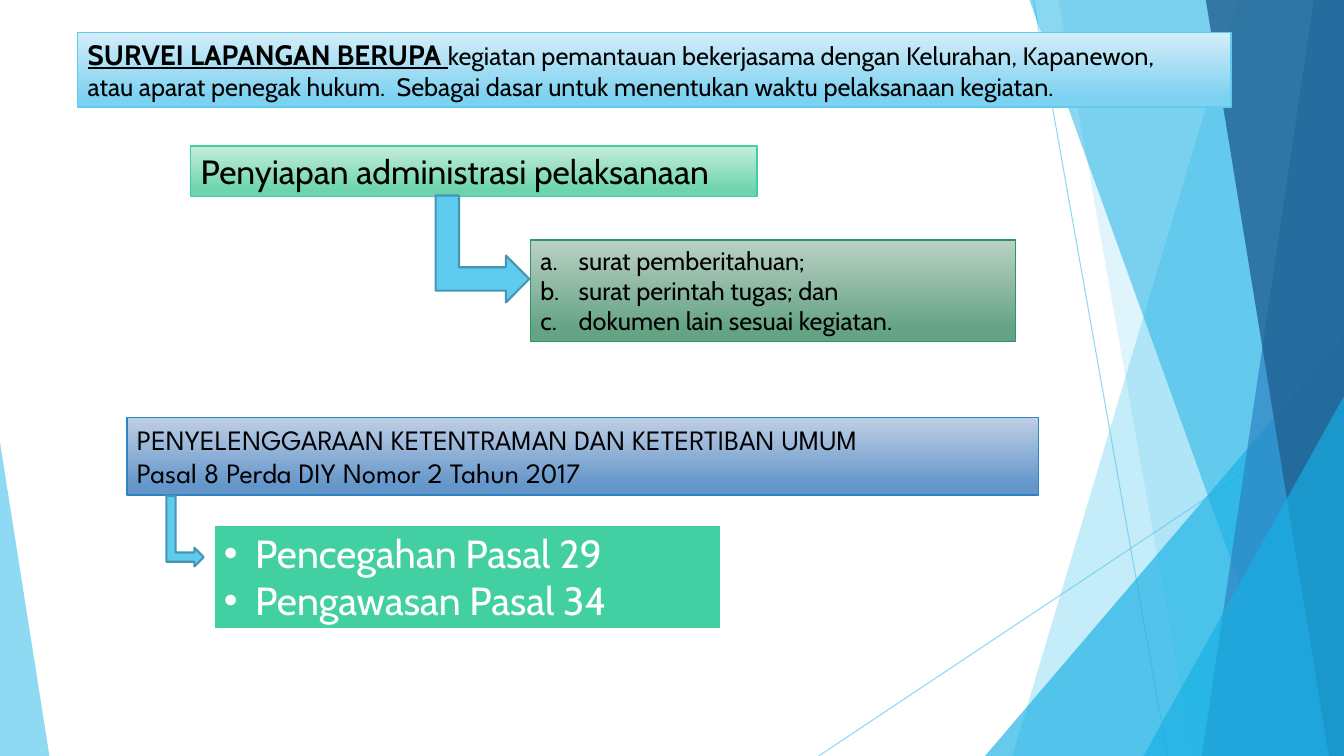
from lxml.etree import SubElement
from pptx import Presentation
from pptx.dml.color import RGBColor
from pptx.enum.shapes import MSO_CONNECTOR as CONNECTOR, MSO_SHAPE as SHAPE
from pptx.enum.text import MSO_ANCHOR as ANCHOR, MSO_AUTO_SIZE as AUTO_SIZE, PP_ALIGN as ALIGN
from pptx.oxml.ns import qn
from pptx.util import Inches, Pt

WIDTH, HEIGHT = 13.33, 7.5
SKY, AZURE, BLUE, NAVY, MINT = "5FCBEF", "17B0E4", "2E83C3", "226292", "42D0A2"
BLACK, WHITE = "000000", "FFFFFF"


def rgb(code):
    """Turn a hex string into a colour."""
    return RGBColor.from_string(code)


def set_alpha(owner, percent):
    """Make the solid colour inside an element partly transparent."""
    colour = next(owner.iter(qn("a:srgbClr")))
    SubElement(colour, qn("a:alpha")).set("val", str(percent * 1000))


def paint(shape, fill, outline=None, weight=1):
    """Give a shape a plain fill or a downward gradient, and an outline."""
    if isinstance(fill, tuple):
        shape.fill.gradient()
        shape.fill.gradient_angle = 270
        for stop, code, position in zip(shape.fill.gradient_stops, fill, (0, 0.88)):
            stop.color.rgb = rgb(code)
            stop.position = position
    else:
        shape.fill.solid()
        shape.fill.fore_color.rgb = rgb(fill)
    if outline:
        shape.line.color.rgb = rgb(outline)
        shape.line.width = Pt(weight)
    else:
        shape.line.fill.background()


def add_facet(slide, points, colour, opacity):
    """Draw one translucent polygon of the backdrop."""
    corners = [(Inches(x), Inches(y)) for x, y in points]
    builder = slide.shapes.build_freeform(*corners[0])
    builder.add_line_segments(corners[1:])
    facet = builder.convert_to_shape()
    facet.shadow.inherit = False
    paint(facet, colour)
    set_alpha(facet.fill._xPr, opacity)


def add_ray(slide, start, end):
    """Draw one thin line of the backdrop."""
    ray = slide.shapes.add_connector(CONNECTOR.STRAIGHT, *map(Inches, start + end))
    ray.line.color.rgb = rgb(SKY)
    ray.line.width = Pt(0.75)
    properties = ray._element.spPr
    set_alpha(properties, 70)
    SubElement(properties, qn("a:effectLst"))


def add_backdrop(slide, width, height):
    """Layer the rays and facets along the slide's edges."""
    add_ray(slide, (10.25, 0), (11.58, height))
    add_ray(slide, (width, 4.03), (8.12, height))

    def band(top, bottom):
        return [(top, 0), (width, 0), (width, height), (bottom, height)]

    def corner(left, top):
        return [(width, top), (width, height), (left, height)]

    facets = [
        (band(12.28, 10.04), SKY, 36),
        (band(10.5, 11.83), SKY, 20),
        (corner(9.77, 3.33), AZURE, 66),
        (band(10.21, 12.91), AZURE, 50),
        (band(13.03, 11.92), BLUE, 70),
        (band(11.96, 13.18), NAVY, 80),
        (corner(11.34, 3.93), AZURE, 66),
        ([(0, 4.39), (0.49, height), (0, height)], SKY, 70),
    ]
    for facet in facets:
        add_facet(slide, *facet)


def place_panel(slide, panel, box, fill, outline, weight=1):
    """Move a panel to its box, bring it to the front and style it."""
    panel.left, panel.top, panel.width, panel.height = map(Inches, box)
    slide.shapes._spTree.append(panel._element)
    paint(panel, fill, outline, weight)
    frame = panel.text_frame
    frame.word_wrap = True
    frame.auto_size = AUTO_SIZE.NONE
    frame.vertical_anchor = ANCHOR.TOP
    return frame


def format_text(frame, size, colour=BLACK, font="Cabin", align=ALIGN.LEFT):
    """Format every paragraph and run of a panel."""
    for paragraph in frame.paragraphs:
        paragraph.alignment = align
        paragraph.space_before = Pt(0)
        for run in paragraph.runs:
            run.font.name = font
            run.font.size = Pt(size)
            run.font.color.rgb = rgb(colour)


def set_markers(frame, indent, tag, **attributes):
    """Give every paragraph a hanging list marker."""
    for paragraph in frame.paragraphs:
        properties = paragraph._p.get_or_add_pPr()
        properties.set("marL", str(Inches(indent)))
        properties.set("indent", str(-Inches(indent)))
        if tag == "a:buChar":
            SubElement(properties, qn("a:buFont")).set("typeface", "Arial")
        SubElement(properties, qn(tag), attributes)


def add_survey(slide, box):
    """Fill the title with the field survey statement."""
    frame = place_panel(slide, slide.shapes.title, box, ("D4EEF9", "7DD1F1"), SKY)
    frame.text = (
        "SURVEI LAPANGAN BERUPA \n"
        "atau aparat penegak hukum.  Sebagai dasar untuk menentukan waktu pelaksanaan kegiatan."
    )
    opening = frame.paragraphs[0]
    opening.add_run().text = "kegiatan pemantauan bekerjasama dengan Kelurahan, Kapanewon,"
    format_text(frame, 18)
    lead = opening.runs[0].font
    lead.size, lead.bold, lead.underline = Pt(20), True, True


def add_heading(slide, box, text, fill, outline, size, font="Cabin"):
    """Add a gradient heading panel."""
    heading = slide.shapes.add_shape(SHAPE.RECTANGLE, 0, 0, 0, 0)
    heading.shadow.inherit = False
    frame = place_panel(slide, heading, box, fill, outline)
    frame.text = text
    format_text(frame, size, font=font)


def add_documents(slide, box):
    """Fill the first body with the lettered list of documents."""
    frame = place_panel(slide, slide.placeholders[1], box, ("BAD1C4", "65A385"), "2E946B")
    frame.text = "surat pemberitahuan;\nsurat perintah tugas; dan\ndokumen lain sesuai kegiatan."
    format_text(frame, 18)
    set_markers(frame, 0.38, "a:buAutoNum", type="alphaLcPeriod")


def add_articles(slide, box):
    """Fill the second body with the bulleted list of articles."""
    frame = place_panel(slide, slide.placeholders[2], box, MINT, WHITE, 2)
    frame.text = "Pencegahan Pasal 29\nPengawasan Pasal 34"
    format_text(frame, 28, WHITE, align=ALIGN.JUSTIFY)
    set_markers(frame, 0.31, "a:buChar", char="•")


def add_elbow(slide, box):
    """Add an arrow that runs down and then right within the box."""
    left, top, width, height = box
    shift = (height - width) / 2
    elbow = slide.shapes.add_shape(
        SHAPE.BENT_UP_ARROW, *map(Inches, (left - shift, top + shift, height, width))
    )
    elbow.rotation = 90
    elbow.shadow.inherit = False
    paint(elbow, SKY, "4696B1", 1.5)


def main():
    """Build and save the slide."""
    deck = Presentation()
    deck.slide_width, deck.slide_height = Inches(WIDTH), Inches(HEIGHT)
    slide = deck.slides.add_slide(deck.slide_layouts.get_by_name("Two Content"))
    add_backdrop(slide, WIDTH, HEIGHT)
    add_survey(slide, (0.77, 0.32, 11.44, 0.74))
    add_heading(slide, (1.89, 1.45, 5.62, 0.5), "Penyiapan administrasi pelaksanaan",
                ("C5ECDB", "6DD5AE"), MINT, 24)
    add_documents(slide, (5.26, 2.38, 4.81, 1.01))
    add_heading(slide, (1.26, 4.14, 9.04, 0.77),
                "PENYELENGGARAAN KETENTRAMAN DAN KETERTIBAN UMUM\n"
                "Pasal 8 Perda DIY Nomor 2 Tahun 2017",
                ("BFCFE5", "6596CA"), BLUE, 20, "League Spartan")
    add_elbow(slide, (1.65, 4.92, 0.37, 0.7))
    add_articles(slide, (2.12, 5.2, 5.04, 1.04))
    add_elbow(slide, (4.32, 1.94, 0.93, 1.06))
    deck.save("out.pptx")


if __name__ == "__main__":
    main()
